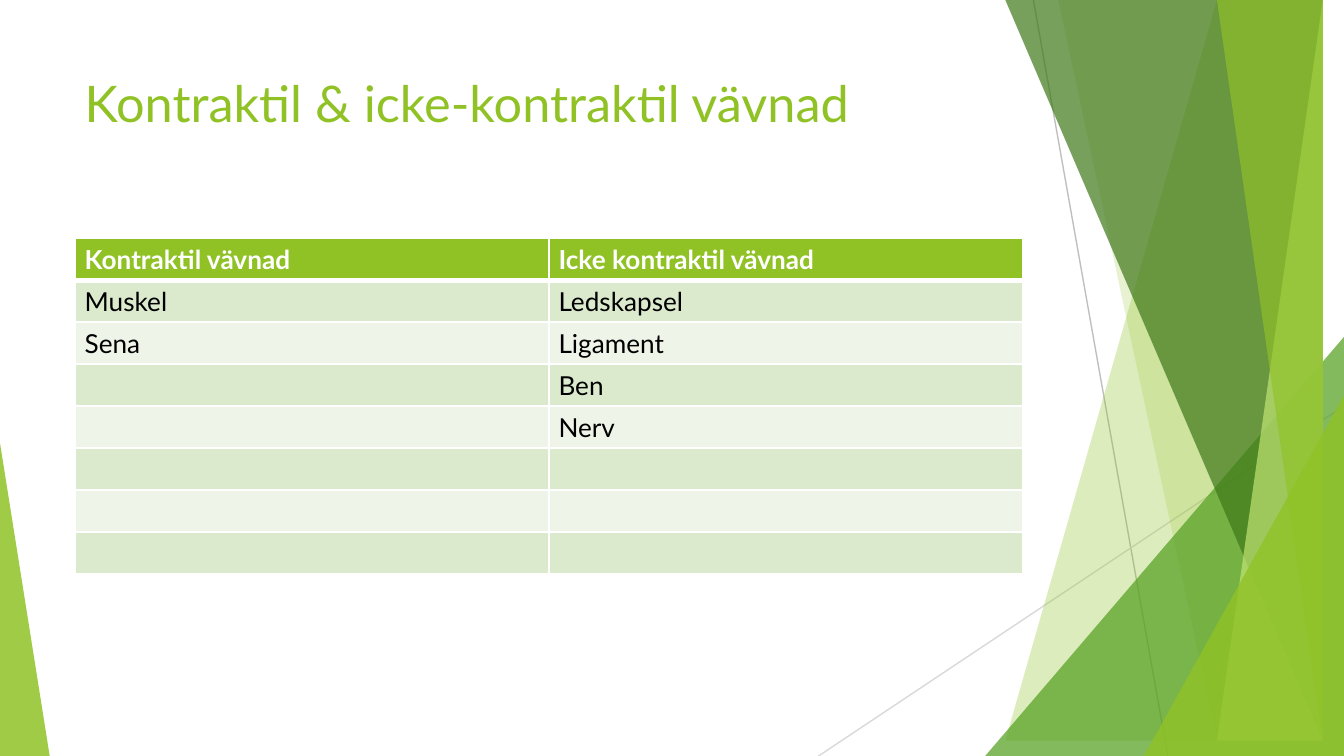
"""Build a slide that compares contractile and non-contractile tissue."""
from dataclasses import dataclass
from itertools import zip_longest

from lxml import etree
from pptx import Presentation
from pptx import util as u
from pptx.dml.color import RGBColor
from pptx.enum import shapes, text
from pptx.oxml.ns import qn

Cm = u.Cm


@dataclass(frozen=True)
class Theme:
    font: str = "Lato"
    title_size: int = 27
    table_size: int = 14
    lime: str = "90C226"
    pale_lime: str = "C0E474"
    green: str = "54A021"
    dark_green: str = "3F7819"
    white: str = "FFFFFF"
    black: str = "000000"
    odd_row: str = "DBE9CD"
    even_row: str = "EEF4E8"
    dark_rule: str = "BFBFBF"
    light_rule: str = "D9D9D9"


THEME = Theme()
WIDTH, HEIGHT = 25.4, 14.29
LEFT, CONTENT_WIDTH = 1.42, 17.91
ROW_COUNT, ROW_HEIGHT = 8, 0.78
INSET_X, INSET_Y = 0.18, 0.1

RULES = [
    (19.53, 0, 22.07, HEIGHT, THEME.dark_rule),
    (WIDTH, 7.67, 15.47, HEIGHT, THEME.light_rule),
]
BACK_PANELS = [
    (23.39, 19.13, THEME.lime, 30),
    (20.02, 22.53, THEME.lime, 20),
]
FRONT_PANELS = [
    (19.46, 24.59, THEME.dark_green, 70),
    (24.84, 22.71, THEME.pale_lime, 70),
    (22.78, 25.1, THEME.lime, 65),
]
TISSUES = {
    "Kontraktil vävnad": ["Muskel", "Sena"],
    "Icke kontraktil vävnad": ["Ledskapsel", "Ligament", "Ben", "Nerv"],
}


def paint(area, color, opacity):
    """Give a shape a translucent fill with no line or shadow."""
    area.shadow.inherit = False
    area.line.fill.background()
    area.fill.solid()
    area.fill.fore_color.rgb = RGBColor.from_string(color)
    tint = area._element.spPr.find(qn("a:solidFill"))[0]
    etree.SubElement(tint, qn("a:alpha"), val=str(opacity * 1000))


def add_rule(slide, x1, y1, x2, y2, color):
    """Draw a thin straight line."""
    rule = slide.shapes.add_connector(
        shapes.MSO_CONNECTOR.STRAIGHT, Cm(x1), Cm(y1), Cm(x2), Cm(y2))
    rule.line.color.rgb = RGBColor.from_string(color)
    rule.line.width = u.Pt(0.75)
    etree.SubElement(rule._element.spPr, qn("a:effectLst"))


def add_panel(slide, top_x, bottom_x, color, opacity):
    """Draw a full-height panel with a slanted left edge."""
    outline = slide.shapes.build_freeform(top_x, 0, scale=Cm(1))
    outline.add_line_segments([(WIDTH, 0), (WIDTH, HEIGHT), (bottom_x, HEIGHT)])
    paint(outline.convert_to_shape(), color, opacity)


def add_wedge(slide, left, width, height, apex, color, opacity):
    """Draw a triangle that stands on the bottom edge."""
    wedge = slide.shapes.add_shape(
        shapes.MSO_SHAPE.ISOSCELES_TRIANGLE,
        Cm(left), Cm(HEIGHT - height), Cm(width), Cm(height))
    wedge.adjustments[0] = apex
    paint(wedge, color, opacity)


def add_decoration(slide):
    """Draw the faceted side panels from back to front."""
    for rule in RULES:
        add_rule(slide, *rule)
    for panel in BACK_PANELS:
        add_panel(slide, *panel)
    add_wedge(slide, 18.62, 6.78, 7.92, 1, THEME.green, 72)
    for panel in FRONT_PANELS:
        add_panel(slide, *panel)
    add_wedge(slide, 21.62, 3.78, 6.81, 1, THEME.lime, 80)
    add_wedge(slide, 0, 0.94, 5.92, 0, THEME.lime, 85)


def style_text(paragraph, size, color, bold=False):
    """Format every run of a paragraph."""
    for run in paragraph.runs:
        run.font.name = THEME.font
        run.font.size = u.Pt(size)
        run.font.bold = bold
        run.font.color.rgb = RGBColor.from_string(color)


def set_insets(box):
    """Set the inner margins of a cell or text frame."""
    box.margin_left = box.margin_right = Cm(INSET_X)
    box.margin_top = box.margin_bottom = Cm(INSET_Y)


def add_title(slide, wording):
    """Fill the title placeholder and bring it in front of the panels."""
    title = slide.shapes.title
    title.left, title.top = Cm(LEFT), Cm(1.27)
    title.width, title.height = Cm(CONTENT_WIDTH), Cm(2.74)
    frame = title.text_frame
    frame.text = wording
    frame.word_wrap = True
    frame.auto_size = text.MSO_AUTO_SIZE.NONE
    frame.vertical_anchor = text.MSO_ANCHOR.TOP
    set_insets(frame)
    frame.paragraphs[0].alignment = text.PP_ALIGN.LEFT
    style_text(frame.paragraphs[0], THEME.title_size, THEME.lime)
    slide.shapes._spTree.append(title._element)


def add_borders(cell, widths):
    """Give a cell white borders, with widths in points by side."""
    for side, width in widths.items():
        border = etree.SubElement(
            cell._tc.get_or_add_tcPr(), qn(f"a:ln{side}"), w=str(u.Pt(width)))
        fill = etree.SubElement(border, qn("a:solidFill"))
        etree.SubElement(fill, qn("a:srgbClr"), val=THEME.white)


def fill_cell(cell, wording, row):
    """Write and format one table cell according to its row."""
    header = row == 0
    band = THEME.odd_row if row % 2 else THEME.even_row
    add_borders(cell, {"L": 1, "R": 1, "T": 3 if row == 1 else 1,
                       "B": 3 if header else 1})
    cell.fill.solid()
    cell.fill.fore_color.rgb = RGBColor.from_string(THEME.lime if header else band)
    set_insets(cell)
    paragraph = cell.text_frame.paragraphs[0]
    paragraph.text = wording
    style_text(paragraph, THEME.table_size,
               THEME.white if header else THEME.black, header)
    if not wording:
        ending = etree.SubElement(paragraph._p, qn("a:endParaRPr"),
                                  sz=str(THEME.table_size * 100))
        etree.SubElement(ending, qn("a:latin"), typeface=THEME.font)


def add_tissue_table(slide, tissues):
    """Add the table with one column for each kind of tissue."""
    table = slide.shapes.add_table(
        ROW_COUNT, len(tissues), Cm(LEFT), Cm(4.5),
        Cm(CONTENT_WIDTH), Cm(ROW_COUNT * ROW_HEIGHT)).table
    for column, (heading, examples) in enumerate(tissues.items()):
        entries = zip_longest(range(ROW_COUNT), [heading, *examples], fillvalue="")
        for row, wording in entries:
            fill_cell(table.cell(row, column), wording, row)


def main():
    """Build and save the presentation."""
    deck = Presentation()
    deck.slide_width, deck.slide_height = Cm(WIDTH), Cm(HEIGHT)
    slide = deck.slides.add_slide(deck.slide_layouts[5])
    add_decoration(slide)
    add_title(slide, "Kontraktil & icke-kontraktil vävnad")
    add_tissue_table(slide, TISSUES)
    deck.save("out.pptx")


if __name__ == "__main__":
    main()
